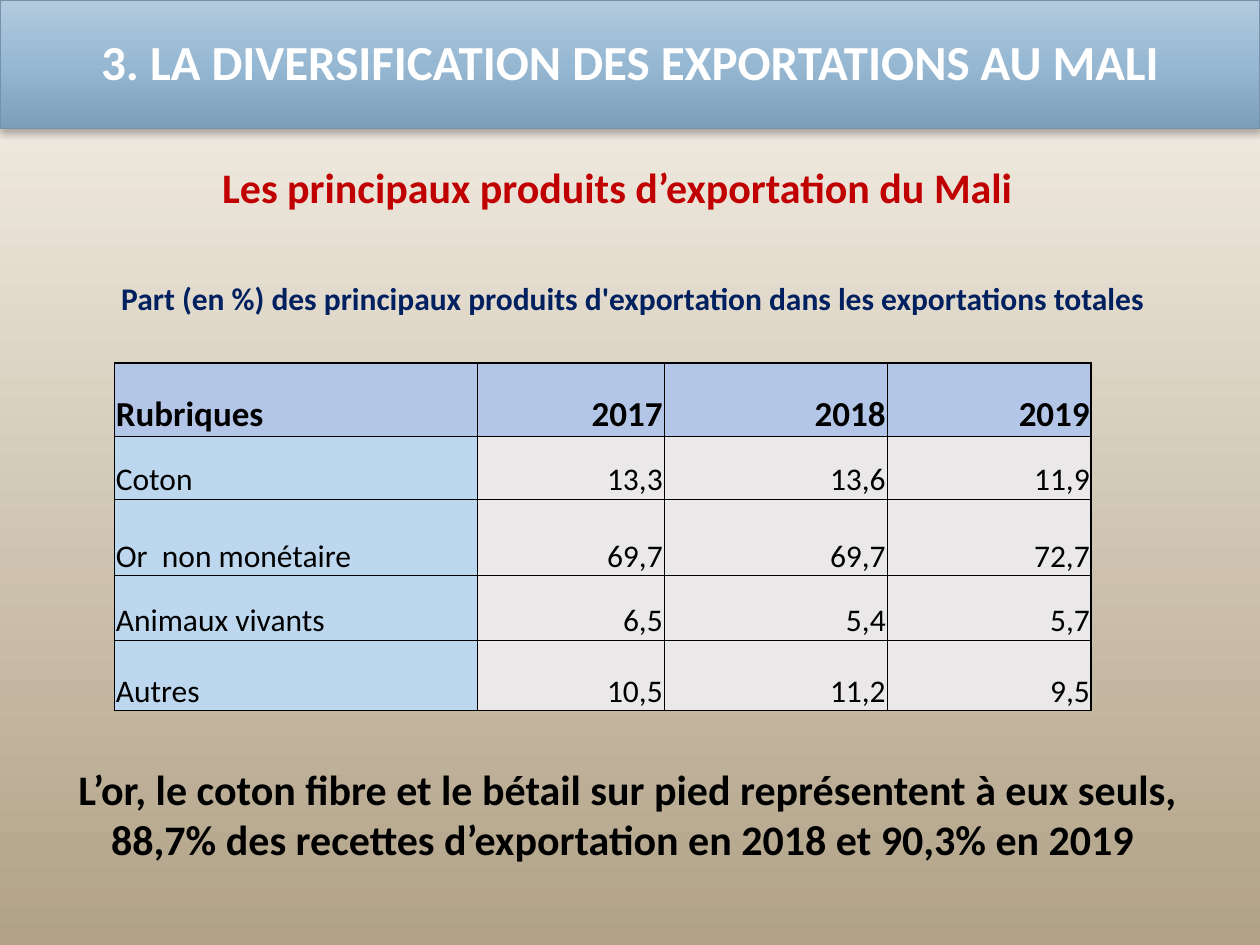
import pptx
import pptx.util
import pptx.dml.color
import pptx.enum.text
import pptx.oxml
import pptx.oxml.ns
from pptx.util import Inches

RGBColor = pptx.dml.color.RGBColor
ALIGN = pptx.enum.text.PP_ALIGN
ANCHOR = pptx.enum.text.MSO_ANCHOR
qn = pptx.oxml.ns.qn
NS = pptx.oxml.ns.nsdecls("a")

FONT = "Calibri"
WHITE = RGBColor(0xFF, 0xFF, 0xFF)
BLACK = RGBColor(0, 0, 0)
RED = RGBColor(0xC0, 0, 0)
NAVY = RGBColor(0, 0x20, 0x60)
BANNER_LINE = RGBColor(0x77, 0x92, 0xA8)
HEAD_FILL = RGBColor(0xB4, 0xC6, 0xE7)
LABEL_FILL = RGBColor(0xBD, 0xD7, 0xEE)
VALUE_FILL = RGBColor(0xEA, 0xE8, 0xE8)
BACKGROUND = [(0, RGBColor(0xF8, 0xF3, 0xEB)), (100, RGBColor(0xB1, 0xA2, 0x87))]
BANNER = [(0, RGBColor(0xB2, 0xCA, 0xDE)), (50, RGBColor(0x97, 0xB8, 0xD3)),
          (100, RGBColor(0x7B, 0x9E, 0xBB))]

NO_STYLE = "{2D5ABB26-0587-4C30-8999-92F81FD0307C}"
COL_WIDTHS = [2.88, 1.48, 1.77, 1.62, 0.48]
ROW_HEIGHTS = [0.98, 0.35, 0.58, 0.5, 0.61, 0.51, 0.56]
FIRST_ROW = 2  # row of the column headings
DATA = [
    ["Rubriques", "2017", "2018", "2019"],
    ["Coton", "13,3", "13,6", "11,9"],
    ["Or  non monétaire", "69,7", "69,7", "72,7"],
    ["Animaux vivants", "6,5", "5,4", "5,7"],
    ["Autres", "10,5", "11,2", "9,5"],
]


def set_gradient(fill, element, stops):
    """Fill from top to bottom with (percent, colour) stops."""
    fill.gradient()
    fill.gradient_angle = 270
    gs_list = next(element.iter(qn("a:gsLst")))
    for gs in list(gs_list):
        gs_list.remove(gs)
    for pos, color in stops:
        gs_list.append(pptx.oxml.parse_xml(
            f'<a:gs {NS} pos="{pos * 1000}"><a:srgbClr val="{color}"/></a:gs>'))


def write(tf, text, size, color, bold=True, align=ALIGN.CENTER):
    p = tf.paragraphs[0]
    p.alignment = align
    r = p.add_run()
    r.text = text
    r.font.name = FONT
    r.font.size = pptx.util.Pt(size)
    r.font.bold = bold
    r.font.color.rgb = color
    return p


def add_banner(slide, box, text):
    s = slide.shapes.title
    s.left, s.top, s.width, s.height = box
    set_gradient(s.fill, s._element.spPr, BANNER)
    s.line.color.rgb = BANNER_LINE
    s.line.width = pptx.util.Pt(0.75)
    s._element.spPr.append(pptx.oxml.parse_xml(
        f'<a:effectLst {NS}><a:outerShdw blurRad="50800" dist="25400" dir="5400000" '
        'rotWithShape="0"><a:srgbClr val="000000"><a:alpha val="28000"/></a:srgbClr>'
        '</a:outerShdw></a:effectLst>'))
    tf = s.text_frame
    tf.word_wrap = True
    tf.vertical_anchor = ANCHOR.MIDDLE
    write(tf, text, 28, WHITE).line_spacing = 0.9


def add_text(slide, box, text, color):
    tf = slide.shapes.add_textbox(*box).text_frame
    tf.word_wrap = True
    return write(tf, text, 24, color)


def set_border(cell, side, width):
    ln = pptx.oxml.parse_xml(
        f'<a:ln{side} {NS} w="{pptx.util.Pt(width)}"><a:solidFill>'
        f'<a:srgbClr val="{BLACK}"/></a:solidFill></a:ln{side}>')
    # Borders come before the fill, in the order L, R, T, B
    tc_pr = cell._tc.get_or_add_tcPr()
    tc_pr.insert("LRTB".index(side), ln)


def add_share_table(slide, box, caption):
    n_rows, n_cols = len(ROW_HEIGHTS), len(COL_WIDTHS)
    table = slide.shapes.add_table(n_rows, n_cols, *box).table
    table.first_row = table.horz_banding = False
    table._tbl.tblPr.find(qn("a:tableStyleId")).text = NO_STYLE
    for col, width in zip(table.columns, COL_WIDTHS):
        col.width = Inches(width)
    for row, height in zip(table.rows, ROW_HEIGHTS):
        row.height = Inches(height)
    for cell in table.iter_cells():
        cell.fill.background()
        cell.vertical_anchor = ANCHOR.BOTTOM
        cell.margin_left = cell.margin_right = cell.margin_top = Inches(0.01)
        cell.margin_bottom = 0

    # Caption across the whole first row
    table.cell(0, 0).merge(table.cell(0, n_cols - 1))
    write(table.cell(0, 0).text_frame, caption, 18, NAVY)

    # Headings and values, with a heavier outer frame
    last_row, last_col = len(DATA) - 1, len(DATA[0]) - 1
    for i, values in enumerate(DATA):
        for j, value in enumerate(values):
            cell = table.cell(FIRST_ROW + i, j)
            head = i == 0
            cell.fill.solid()
            cell.fill.fore_color.rgb = (
                HEAD_FILL if head else LABEL_FILL if j == 0 else VALUE_FILL)
            write(cell.text_frame, value, 20 if head else 18, BLACK, head,
                  ALIGN.LEFT if j == 0 else ALIGN.RIGHT)
            outer = {"L": j == 0, "R": j == last_col, "T": head, "B": i == last_row}
            for side, is_outer in outer.items():
                set_border(cell, side, 1 if is_outer else 0.5)


def main():
    prs = pptx.Presentation()
    prs.slide_width, prs.slide_height = Inches(10), Inches(7.5)
    slide = prs.slides.add_slide(prs.slide_layouts[5])
    set_gradient(slide.background.fill, slide._element, BACKGROUND)

    add_banner(slide, (0, 0, prs.slide_width, Inches(1.02)),
               "3. LA DIVERSIFICATION DES EXPORTATIONS AU MALI")

    # Subtitle
    p = add_text(slide, (Inches(-0.04), Inches(1.15), Inches(9.88), Inches(6.19)),
                 "Les principaux produits d’exportation du Mali", RED)
    p.line_spacing = 1.2

    add_share_table(
        slide, (Inches(0.91), Inches(1.55), Inches(8.23), Inches(4.09)),
        "Part (en %) des principaux produits d'exportation dans les exportations totales")

    # Conclusion
    add_text(slide, (Inches(0.12), Inches(6.01), Inches(9.72), Inches(0.91)),
             "L’or, le coton fibre et le bétail sur pied représentent à eux seuls, "
             "88,7% des recettes d’exportation en 2018 et 90,3% en 2019 ", BLACK)

    prs.save("out.pptx")


if __name__ == "__main__":
    main()
